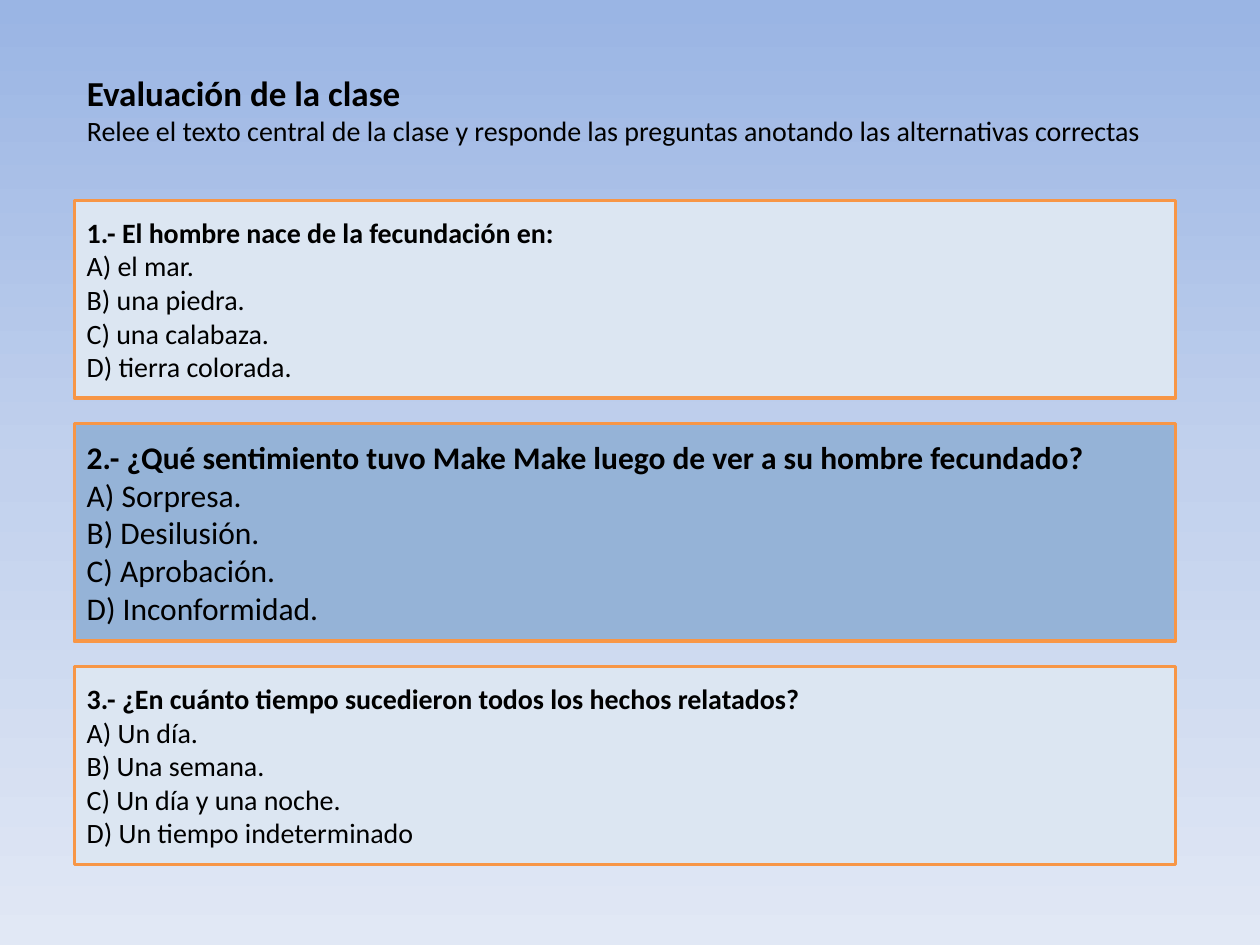
from copy import deepcopy
from dataclasses import dataclass

from pptx import Presentation
from pptx.dml.color import RGBColor
from pptx.enum.shapes import MSO_SHAPE
from pptx.enum.text import MSO_ANCHOR, MSO_AUTO_SIZE, PP_ALIGN
from pptx.util import Inches, Pt


@dataclass(frozen=True)
class Theme:
    font: str = "Calibri"
    ink: str = "000000"
    light: str = "DCE6F2"
    dark: str = "95B3D7"
    edge: str = "F79646"
    sky: tuple = ((0, "9AB5E4"), (0.5, "C2D1ED"), (1, "E1E8F5"))
    head: int = 20
    large: int = 18
    small: int = 16


THEME = Theme()
LEFT, WIDTH, TOP, GAP = 0.59, 8.74, 1.59, 0.2

# Each question: height, fill, type size, lines
QUIZ = [
    (1.57, THEME.light, THEME.small, [
        "1.- El hombre nace de la fecundación en:",
        "A) el mar.",
        "B) una piedra.",
        "C) una calabaza.",
        "D) tierra colorada.",
    ]),
    (1.73, THEME.dark, THEME.large, [
        "2.- ¿Qué sentimiento tuvo Make Make luego de ver a su hombre fecundado?",
        "A) Sorpresa.",
        "B) Desilusión.",
        "C) Aprobación.",
        "D) Inconformidad.",
    ]),
    (1.57, THEME.light, THEME.small, [
        "3.- ¿En cuánto tiempo sucedieron todos los hechos relatados?",
        "A) Un día.",
        "B) Una semana.",
        "C) Un día y una noche.",
        "D) Un tiempo indeterminado",
    ]),
]


def color(code):
    return RGBColor.from_string(code)


def write(frame, lines, sizes, align):
    """Fill the frame with one paragraph per line, the first one bold."""
    frame.word_wrap = True
    frame.text = "\n".join(lines)
    for i, (para, size) in enumerate(zip(frame.paragraphs, sizes)):
        para.alignment = align
        font = para.font
        font.name, font.size, font.bold = THEME.font, Pt(size), i == 0
        font.color.rgb = color(THEME.ink)


def paint_sky(slide):
    """Give the background a three-stop gradient from top to bottom."""
    fill = slide.background.fill
    fill.gradient()
    fill.gradient_angle = 270
    stops = slide.element.xpath(".//p:bgPr//a:gs")
    stops[-1].addnext(deepcopy(stops[-1]))
    for stop, (place, code) in zip(fill.gradient_stops, THEME.sky):
        stop.position = place
        stop.color.rgb = color(code)


def add_head(slide):
    title = slide.shapes.title
    title.left, title.top = Inches(LEFT), Inches(0.52)
    title.width, title.height = Inches(8.82), Inches(1.01)
    frame = title.text_frame
    frame.auto_size = MSO_AUTO_SIZE.NONE
    frame.vertical_anchor = MSO_ANCHOR.TOP
    lines = [
        "Evaluación de la clase",
        "Relee el texto central de la clase y responde las preguntas "
        "anotando las alternativas correctas",
    ]
    write(frame, lines, (THEME.head, THEME.small), PP_ALIGN.LEFT)


def add_card(slide, top, height, fill, size, lines):
    card = slide.shapes.add_shape(
        MSO_SHAPE.RECTANGLE,
        Inches(LEFT), Inches(top), Inches(WIDTH), Inches(height))
    card.shadow.inherit = False
    card.fill.solid()
    card.fill.fore_color.rgb = color(fill)
    card.line.color.rgb = color(THEME.edge)
    card.line.width = Pt(2)
    card.text_frame.vertical_anchor = MSO_ANCHOR.MIDDLE
    write(card.text_frame, lines, [size] * len(lines), PP_ALIGN.JUSTIFY)


def main():
    deck = Presentation()
    deck.slide_width, deck.slide_height = Inches(10), Inches(7.5)
    slide = deck.slides.add_slide(deck.slide_layouts.get_by_name("Title Only"))
    paint_sky(slide)
    add_head(slide)
    top = TOP
    for height, fill, size, lines in QUIZ:
        add_card(slide, top, height, fill, size, lines)
        top += height + GAP
    deck.save("out.pptx")


if __name__ == "__main__":
    main()
